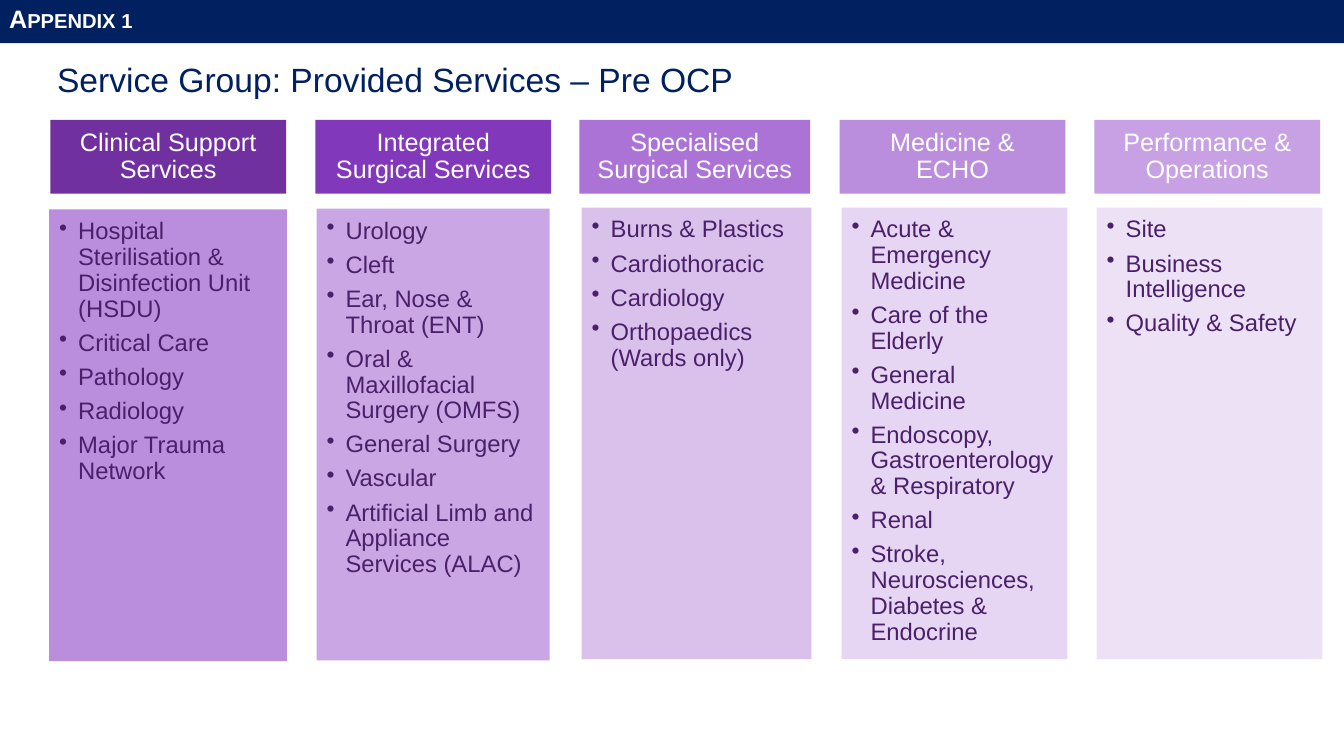
from lxml.etree import SubElement
from pptx import Presentation
from pptx.dml.color import RGBColor
from pptx.enum.shapes import MSO_SHAPE as Shape
from pptx.enum.text import MSO_ANCHOR as Anchor, PP_ALIGN as Align
from pptx.oxml.ns import qn
from pptx.util import Cm, Pt

NAVY, WHITE, PLUM = "002060", "FFFFFF", "4A206A"
HEADER_TOP, HEADER_HEIGHT, LIST_HEIGHT = 3.02, 1.86, 11.38

# Each column: a header and a list, both with left, width, fill and opacity
# in percent; the list also has its top.
COLUMNS = [
    (("Clinical Support Services", 1.27, 5.94, "7030A0", 100),
     (1.24, 5.28, 5.99, "B482DA", 90),
     ["Hospital Sterilisation & Disinfection Unit (HSDU)", "Critical Care",
      "Pathology", "Radiology", "Major Trauma Network"]),
    (("Integrated Surgical Services", 7.95, 5.94, "8238BA", 100),
     (7.98, 5.26, 5.87, "C7A1E3", 93),
     ["Urology", "Cleft", "Ear, Nose & Throat (ENT)",
      "Oral & Maxillofacial Surgery (OMFS)", "General Surgery", "Vascular",
      "Artificial Limb and Appliance Services (ALAC)"]),
    (("Specialised Surgical Services", 14.6, 5.82, "A364D2", 90),
     (14.66, 5.23, 5.79, "D6BBEB", 90),
     ["Burns & Plastics", "Cardiothoracic", "Cardiology",
      "Orthopaedics (Wards only)"]),
    (("Medicine & ECHO", 21.16, 5.69, "B482DA", 90),
     (21.21, 5.23, 5.69, "E4D2F2", 90),
     ["Acute & Emergency Medicine", "Care of the Elderly", "General Medicine",
      "Endoscopy, Gastroenterology & Respiratory", "Renal",
      "Stroke, Neurosciences, Diabetes & Endocrine"]),
    (("Performance & Operations", 27.58, 5.69, "C7A1E3", 100),
     (27.64, 5.23, 5.69, "ECDFF5", 90),
     ["Site", "Business Intelligence", "Quality & Safety"]),
]


def rgb(hex_code):
    return RGBColor.from_string(hex_code)


def add_panel(slide, left, top, width, height, fill, opacity=100):
    """Add a borderless rectangle, see-through when opacity is below 100."""
    panel = slide.shapes.add_shape(
        Shape.RECTANGLE, Cm(left), Cm(top), Cm(width), Cm(height))
    panel.shadow.inherit = False
    panel.line.fill.background()
    panel.fill.solid()
    panel.fill.fore_color.rgb = rgb(fill)
    if opacity < 100:
        color = panel.fill._xPr.find(".//" + qn("a:srgbClr"))
        SubElement(color, qn("a:alpha")).set("val", str(opacity * 1000))
    return panel


def set_frame(frame, anchor, left, top, right, bottom):
    frame.word_wrap = True
    frame.vertical_anchor = anchor
    frame.margin_left, frame.margin_top = Cm(left), Cm(top)
    frame.margin_right, frame.margin_bottom = Cm(right), Cm(bottom)


def write(paragraph, text, size, color, align=Align.LEFT):
    paragraph.text = text
    paragraph.alignment = align
    paragraph.line_spacing = 0.9
    font = paragraph.font
    font.name, font.size, font.color.rgb = "Arial", Pt(size), rgb(color)


def add_bullet(paragraph):
    properties = paragraph._p.get_or_add_pPr()
    properties.set("marL", str(Cm(0.48)))
    properties.set("indent", str(-Cm(0.48)))
    SubElement(properties, qn("a:buChar")).set("char", "•")


def add_header(slide, name, left, width, fill, opacity):
    header = add_panel(slide, left, HEADER_TOP, width, HEADER_HEIGHT, fill, opacity)
    set_frame(header.text_frame, Anchor.MIDDLE, 0.36, 0.2, 0.36, 0.2)
    write(header.text_frame.paragraphs[0], name, 18, WHITE, Align.CENTER)


def add_service_list(slide, services, left, top, width, fill, opacity):
    frame = add_panel(slide, left, top, width, LIST_HEIGHT, fill, opacity).text_frame
    set_frame(frame, Anchor.TOP, 0.25, 0.25, 0.33, 0.38)
    for index, service in enumerate(services):
        paragraph = frame.add_paragraph() if index else frame.paragraphs[0]
        add_bullet(paragraph)
        write(paragraph, service, 17, PLUM)
        paragraph.space_after = Pt(6)


def add_title(slide, text):
    title = slide.shapes.add_textbox(Cm(1.19), Cm(1.47), Cm(29.79), Cm(14.55))
    set_frame(title.text_frame, Anchor.TOP, 0.25, 0.13, 0.25, 0.13)
    write(title.text_frame.paragraphs[0], text, 24, NAVY)


def add_banner(slide, text):
    banner = add_panel(slide, 0, -0.05, 33.87, 1.14, NAVY)
    set_frame(banner.text_frame, Anchor.MIDDLE, 0.23, 0.1, 0.23, 0.1)
    paragraph = banner.text_frame.paragraphs[0]
    write(paragraph, text, 18, WHITE)
    paragraph.font.bold = True
    paragraph.runs[0]._r.get_or_add_rPr().set("cap", "small")


def main():
    deck = Presentation()
    deck.slide_width, deck.slide_height = Cm(33.87), Cm(19.05)
    slide = deck.slides.add_slide(deck.slide_layouts[6])

    add_title(slide, "Service Group: Provided Services – Pre OCP")

    # Service groups
    for header, (left, top, width, fill, opacity), services in COLUMNS:
        add_header(slide, *header)
        add_service_list(slide, services, left, top, width, fill, opacity)

    add_banner(slide, "Appendix 1")
    deck.save("out.pptx")


if __name__ == "__main__":
    main()
